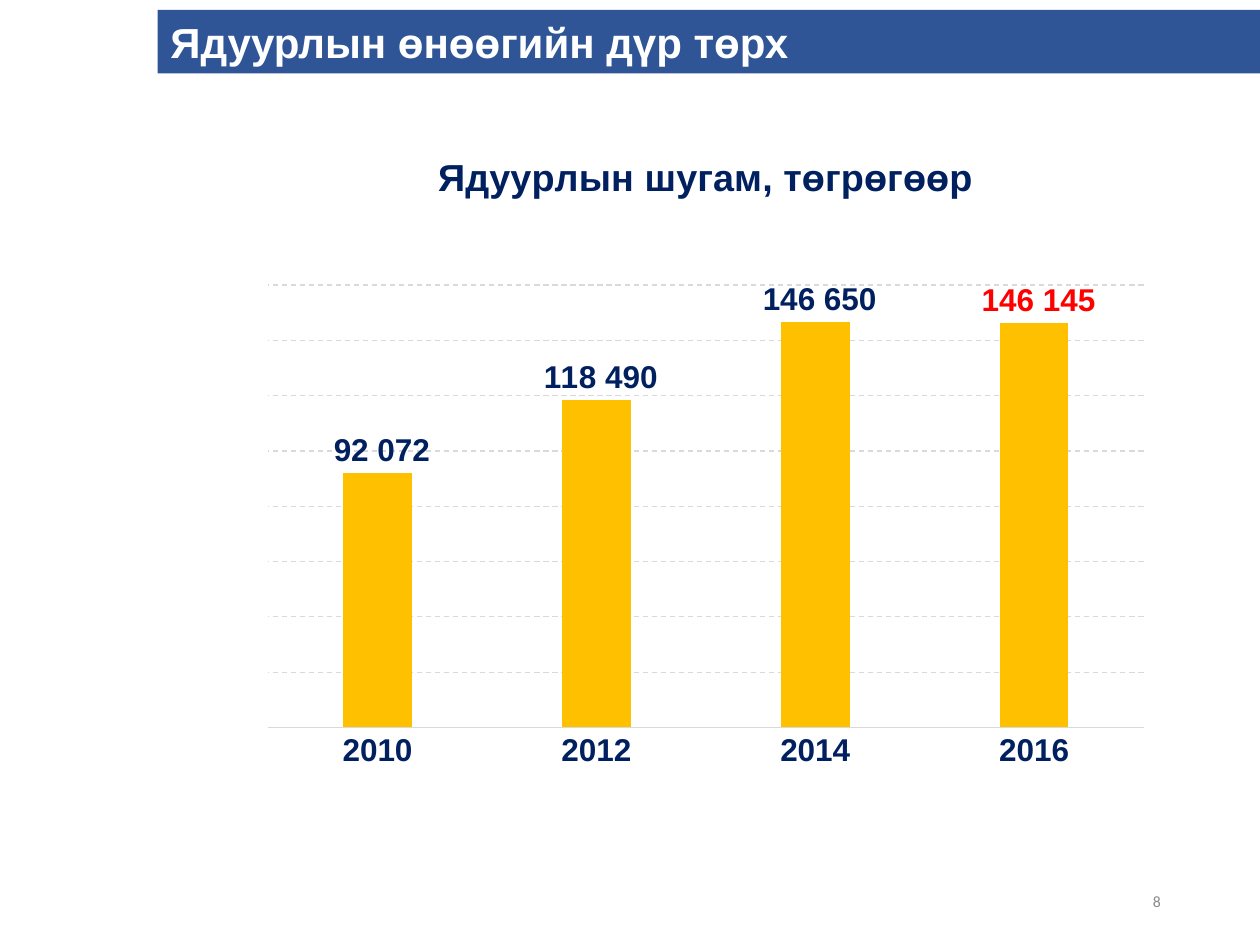
from lxml import etree
from pptx import Presentation
from pptx.chart import data
from pptx.dml import color
from pptx.enum import chart as ch, dml, text
from pptx.oxml import ns, parse_xml
from pptx.util import Cm, Pt


def rgb(hue):
    return color.RGBColor.from_string(hue)


def put(frame, words, size, hue, face="Arial", bold=False, align=text.PP_ALIGN.LEFT):
    para = frame.paragraphs[0]
    para.alignment = align
    run = para.add_run()
    run.text = words
    font = run.font
    font.size, font.bold, font.name = Pt(size), bold, face
    font.color.rgb = rgb(hue)


NAVY, GRAY = "002060", "D9D9D9"
MASK = r"#\ ###\ ###"

deck = Presentation()
deck.slide_width, deck.slide_height = Cm(25.4), Cm(19.05)
slide = deck.slides.add_slide(deck.slide_layouts[5])

head = slide.shapes.title
head.left, head.top, head.width, head.height = Cm(3.18), Cm(0.2), Cm(22.22), Cm(1.28)
head.fill.solid()
head.fill.fore_color.rgb = rgb("2F5597")
head.text_frame.vertical_anchor = text.MSO_ANCHOR.MIDDLE
head.text_frame.auto_size = text.MSO_AUTO_SIZE.NONE
put(head.text_frame, "Ядуурлын өнөөгийн дүр төрх", 24, "FFFFFF", bold=True)

facts = data.CategoryChartData(number_format=MASK)
facts.categories = ["2010", "2012", "2014", "2016"]
facts.add_series("Series 1", [92072, 118490, 146650, 146145])
chart = slide.shapes.add_chart(
    ch.XL_CHART_TYPE.COLUMN_CLUSTERED, Cm(4.83), Cm(2.54), Cm(18.8), Cm(13.34), facts
).chart
chart.has_legend = False
chart.font.size, chart.font.name = Pt(18), "Arial"
chart.font.color.rgb = rgb(NAVY)
chart.has_title = True
put(chart.chart_title.text_frame, "Ядуурлын шугам, төгрөгөөр", 21.6, NAVY,
    bold=True, align=text.PP_ALIGN.CENTER)
chart.chart_title.include_in_layout = False

years = chart.category_axis
years.major_tick_mark = ch.XL_TICK_MARK.NONE
years.format.line.color.rgb = rgb(GRAY)
years.format.line.width = Pt(0.75)
years.tick_labels.font.size = Pt(18)
years.tick_labels.font.bold = True
years.tick_labels.font.name = "Arial"
years.tick_labels.font.color.rgb = rgb(NAVY)

scale = chart.value_axis
scale.visible = False
scale.minimum_scale, scale.maximum_scale, scale.major_unit = 0, 160000, 20000
scale.has_major_gridlines = True
grid = scale.major_gridlines.format.line
grid.color.rgb = rgb(GRAY)
grid.width = Pt(0.75)
grid.dash_style = dml.MSO_LINE.DASH

plot = chart.plots[0]
plot.gap_width, plot.overlap, plot.vary_by_categories = 219, -27, False
bars = plot.series[0]
bars.format.fill.solid()
bars.format.fill.fore_color.rgb = rgb("FFC000")

tags = bars.data_labels
tags.show_value = True
tags.number_format, tags.number_format_is_linked = MASK, False
last = bars.points[3].data_label
for tag, hue in ((tags, NAVY), (last, "FF0000")):
    tag.position = ch.XL_LABEL_POSITION.OUTSIDE_END
    tag.font.size, tag.font.bold, tag.font.name = Pt(18), True, "Arial"
    tag.font.color.rgb = rgb(hue)

area = chart._chartSpace.chart.plotArea
for old in area.findall(ns.qn("c:layout")):
    area.remove(old)
place = parse_xml(f"<c:layout {ns.nsdecls('c')}><c:manualLayout/></c:layout>")
rules = (("layoutTarget", "inner"), ("xMode", "edge"), ("yMode", "edge"),
         ("x", "0.03"), ("y", "0.24"), ("w", "0.94"), ("h", "0.67"))
for name, val in rules:
    etree.SubElement(place[0], ns.qn(f"c:{name}")).set("val", val)
area.insert(0, place)

white = '<a:solidFill><a:srgbClr val="FFFFFF"/></a:solidFill>'
chart._chartSpace.chart.addnext(parse_xml(
    f"<c:spPr {ns.nsdecls('c', 'a')}>{white}<a:ln w=\"9525\">{white}</a:ln></c:spPr>"))

page = slide.shapes.add_textbox(Cm(17.93), Cm(17.65), Cm(5.72), Cm(1.02)).text_frame
page.word_wrap = True
page.vertical_anchor = text.MSO_ANCHOR.MIDDLE
put(page, "8", 9, "898989", face="Calibri", align=text.PP_ALIGN.RIGHT)

deck.save("out.pptx")
